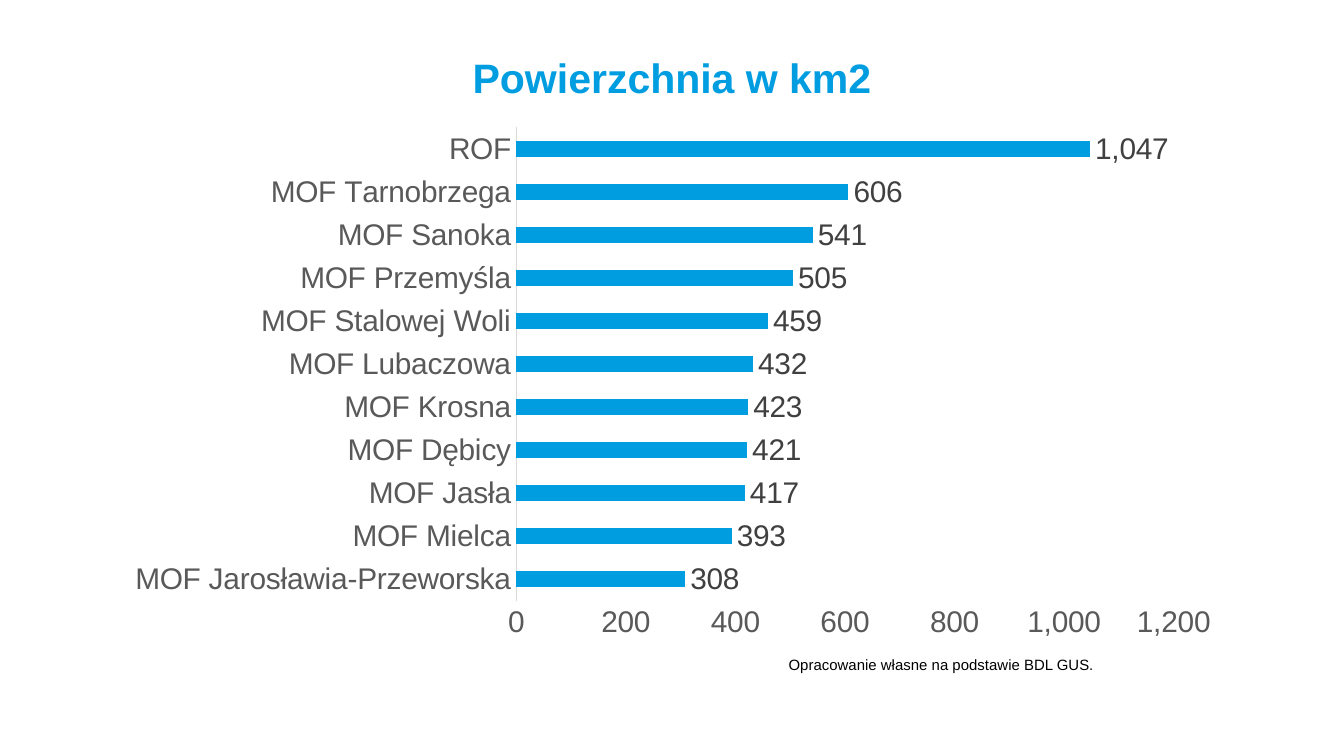
from pptx import Presentation
from pptx.chart.data import CategoryChartData as ChartData
from pptx.dml.color import RGBColor
from pptx.enum.chart import XL_CHART_TYPE as Kind, XL_LABEL_POSITION as Place, XL_TICK_MARK as Tick
from pptx.enum.text import MSO_ANCHOR as Anchor, MSO_AUTO_SIZE as Fit, PP_ALIGN as Align
from pptx.util import Pt

BLUE, GREY, DARK, RULE, BLACK = "009DE0", "595959", "404040", "D9D9D9", "000000"
AREAS = [
    ("MOF Jarosławia-Przeworska", 308),
    ("MOF Mielca", 393),
    ("MOF Jasła", 417),
    ("MOF Dębicy", 421),
    ("MOF Krosna", 423),
    ("MOF Lubaczowa", 432),
    ("MOF Stalowej Woli", 459),
    ("MOF Przemyśla", 505),
    ("MOF Sanoka", 541),
    ("MOF Tarnobrzega", 606),
    ("ROF", 1047),
]


def paint(target, color):
    """Give a fill or line one solid colour."""
    target.solid()
    target.fore_color.rgb = RGBColor.from_string(color)


def style(font, size, color, bold=False):
    font.name, font.size, font.bold = "Arial", Pt(size), bold
    font.color.rgb = RGBColor.from_string(color)


def add_title(slide, box, text):
    title = slide.shapes.title
    title.left, title.top, title.width, title.height = map(Pt, box)
    frame = title.text_frame
    frame.margin_left = frame.margin_top = frame.margin_right = frame.margin_bottom = 0
    frame.vertical_anchor = Anchor.TOP
    frame.auto_size = Fit.NONE
    para = frame.paragraphs[0]
    para.alignment = Align.CENTER
    run = para.add_run()
    run.text = text
    style(run.font, 22, BLUE, True)


def add_bars(slide, box, areas):
    data = ChartData(number_format="#,##0")
    data.categories = [name for name, _ in areas]
    data.add_series("Powierzchnia w km2", [area for _, area in areas])
    chart = slide.shapes.add_chart(Kind.BAR_CLUSTERED, *map(Pt, box), data).chart
    chart.has_legend = chart.has_title = False
    style(chart.font, 16, BLACK)

    for axis in (chart.category_axis, chart.value_axis):
        axis.has_major_gridlines = False
        axis.major_tick_mark = axis.minor_tick_mark = Tick.NONE
        style(axis.tick_labels.font, 16, GREY)
    rule = chart.category_axis.format.line
    paint(rule.fill, RULE)
    rule.width = Pt(0.75)
    chart.value_axis.format.line.fill.background()
    ticks = chart.value_axis.tick_labels
    ticks.number_format, ticks.number_format_is_linked = "#,##0", False

    plot = chart.plots[0]
    plot.gap_width, plot.vary_by_categories = 182, False
    bars = plot.series[0]
    paint(bars.format.fill, BLUE)
    bars.invert_if_negative = False
    labels = bars.data_labels
    labels.show_value, labels.position = True, Place.OUTSIDE_END
    labels.number_format, labels.number_format_is_linked = "#,##0", False
    style(labels.font, 16, DARK)


def add_note(slide, box, text):
    frame = slide.shapes.add_textbox(*map(Pt, box)).text_frame
    frame.word_wrap = True
    frame.auto_size = Fit.SHAPE_TO_FIT_TEXT
    run = frame.paragraphs[0].add_run()
    run.text = text
    style(run.font, 8, BLACK)


def main():
    deck = Presentation()
    deck.slide_width, deck.slide_height = Pt(720), Pt(405)
    slide = deck.slides.add_slide(deck.slide_layouts[5])
    add_title(slide, (60, 28, 600, 64), "Powierzchnia w km2")
    add_bars(slide, (60.5, 62.6, 600, 285), AREAS)
    add_note(slide, (415.4, 347.8, 255, 17), "Opracowanie własne na podstawie BDL GUS.")
    deck.save("out.pptx")


if __name__ == "__main__":
    main()
